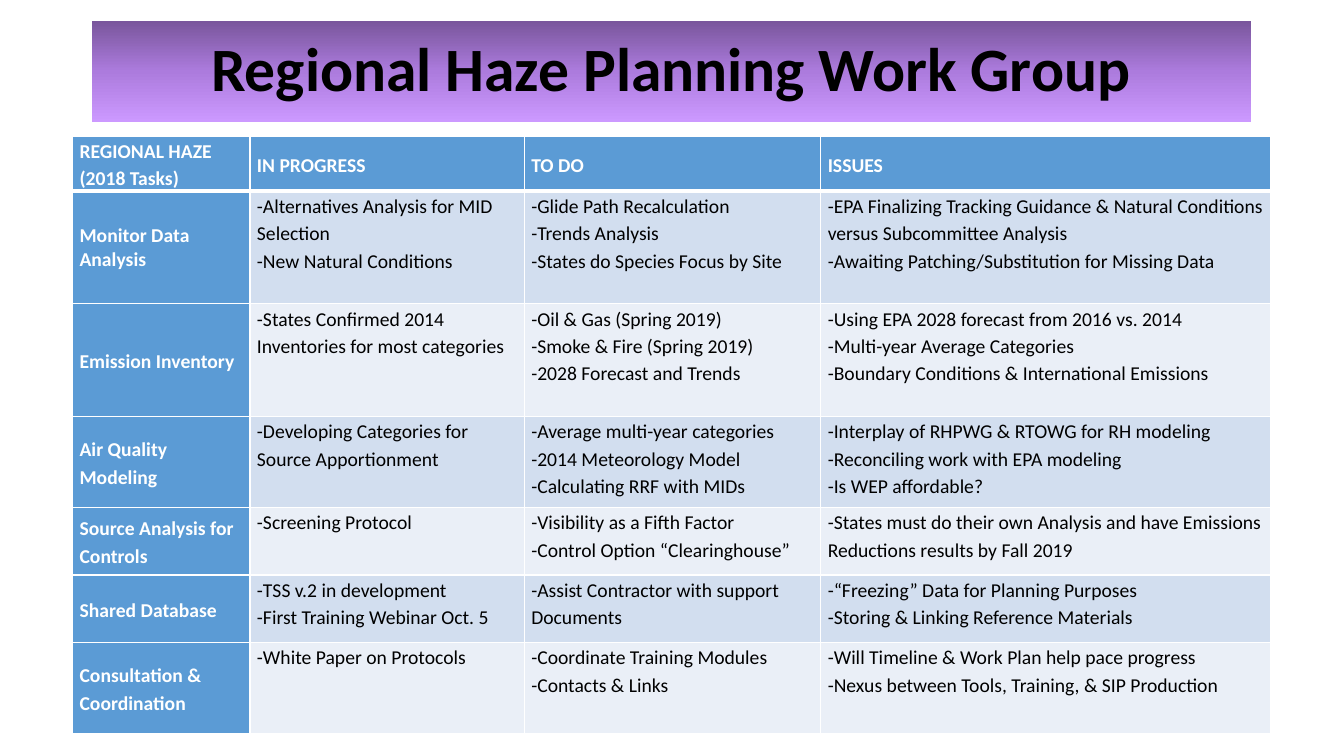
"""Build the Regional Haze Planning Work Group status slide."""
from copy import deepcopy

from lxml import etree
from pptx import Presentation
from pptx import util as u
from pptx.dml.color import RGBColor
from pptx.enum import text
from pptx.oxml.ns import qn

WIDTH, HEIGHT = u.Inches(13.33), u.Inches(7.5)
FONT = "Calibri"
WHITE, BLACK, BLUE = "FFFFFF", "000000", "5B9BD5"
BANDS = ("D2DEEF", "EAEFF7")
TITLE_GRADIENT = ((0, "79569C"), (0.5, "AC7BDD"), (1, "CC99FF"))
COLUMN_SHARES = (13.2, 20.41, 22.06, 33.46)
ROW_SHARES = (7.2, 14.93, 14.93, 12, 8.93, 8.93, 12)
TASKS = (
    ("REGIONAL HAZE (2018 Tasks)", "IN PROGRESS", "TO DO", "ISSUES"),
    ("Monitor Data Analysis",
     "-Alternatives Analysis for MID Selection\n-New Natural Conditions",
     "-Glide Path Recalculation\n-Trends Analysis\n-States do Species Focus by Site",
     "-EPA Finalizing Tracking Guidance & Natural Conditions versus Subcommittee Analysis\n"
     "-Awaiting Patching/Substitution for Missing Data"),
    ("Emission Inventory",
     "-States Confirmed 2014 Inventories for most categories",
     "-Oil & Gas (Spring 2019)\n-Smoke & Fire (Spring 2019)\n-2028 Forecast and Trends",
     "-Using EPA 2028 forecast from 2016 vs. 2014\n-Multi-year Average Categories\n"
     "-Boundary Conditions & International Emissions"),
    ("Air Quality Modeling",
     "-Developing Categories for Source Apportionment",
     "-Average multi-year categories\n-2014 Meteorology Model\n-Calculating RRF with MIDs",
     "-Interplay of RHPWG & RTOWG for RH modeling\n-Reconciling work with EPA modeling\n"
     "-Is WEP affordable?"),
    ("Source Analysis for Controls",
     "-Screening Protocol",
     "-Visibility as a Fifth Factor\n-Control Option “Clearinghouse”",
     "-States must do their own Analysis and have Emissions Reductions results by Fall 2019"),
    ("Shared Database",
     "-TSS v.2 in development\n-First Training Webinar Oct. 5",
     "-Assist Contractor with support Documents",
     "-“Freezing” Data for Planning Purposes\n-Storing & Linking Reference Materials"),
    ("Consultation & Coordination",
     "-White Paper on Protocols",
     "-Coordinate Training Modules\n-Contacts & Links",
     "-Will Timeline & Work Plan help pace progress\n"
     "-Nexus between Tools, Training, & SIP Production"),
)


def color(value):
    """Turn a hex string into a colour."""
    return RGBColor.from_string(value)


def across(percent):
    """Return a share of the slide's width."""
    return round(WIDTH * percent / 100)


def down(percent):
    """Return a share of the slide's height."""
    return round(HEIGHT * percent / 100)


def style_paragraph(p, size, value, bold, spacing):
    """Set the font and line spacing of a paragraph."""
    p.font.name, p.font.size, p.font.bold = FONT, u.Pt(size), bold
    p.font.color.rgb = color(value)
    p.line_spacing = spacing


def fill_gradient(fill, stops):
    """Fill from top to bottom through three colour stops."""
    fill.gradient()
    fill.gradient_angle = 270
    first = fill.gradient_stops[0]._gs
    first.addnext(deepcopy(first))
    for stop, (position, value) in zip(fill.gradient_stops, stops):
        stop.position = position
        stop.color.rgb = color(value)


def add_title(s, words):
    """Place the title on its gradient banner."""
    sp = s.shapes.title
    sp.left, sp.top, sp.width, sp.height = across(6.83), down(2.8), across(86.27), down(13.33)
    fill_gradient(sp.fill, TITLE_GRADIENT)
    tf = sp.text_frame
    tf.text = words
    tf.auto_size = text.MSO_AUTO_SIZE.NONE
    tf.vertical_anchor = text.MSO_ANCHOR.MIDDLE
    p = tf.paragraphs[0]
    p.alignment = text.PP_ALIGN.CENTER
    style_paragraph(p, 44, BLACK, True, 0.9)


def set_borders(cell, top, bottom):
    """Draw white cell borders with the given top and bottom widths."""
    sides = (("L", 1), ("R", 1), ("T", top), ("B", bottom))
    for i, (side, width) in enumerate(sides):
        ln = etree.Element(qn(f"a:ln{side}"), w=str(u.Pt(width)))
        solid = etree.SubElement(ln, qn("a:solidFill"))
        etree.SubElement(solid, qn("a:srgbClr"), val=WHITE)
        cell._tc.get_or_add_tcPr().insert(i, ln)


def format_cell(cell, row, column):
    """Format a cell by its place in the table."""
    heading = row == 0 or column == 0
    centred = heading and (row, column) != (0, 0)
    cell.margin_left = cell.margin_right = u.Inches(0.07)
    cell.margin_top = cell.margin_bottom = 0
    cell.vertical_anchor = text.MSO_ANCHOR.MIDDLE if centred else text.MSO_ANCHOR.TOP
    cell.fill.solid()
    cell.fill.fore_color.rgb = color(BLUE if heading else BANDS[(row - 1) % 2])
    set_borders(cell, 3 if row == 1 else 1, 3 if row == 0 else 1)
    spacing = 1.0 if (row, column) == (1, 0) else 1.15
    for p in cell.text_frame.paragraphs:
        style_paragraph(p, 14, WHITE if heading else BLACK, heading, spacing)


def add_task_table(s, tasks):
    """Add the table of tasks and their status."""
    table = s.shapes.add_table(
        len(tasks), len(COLUMN_SHARES), across(5.4), down(18),
        across(sum(COLUMN_SHARES)), down(sum(ROW_SHARES))).table
    for column, share in zip(table.columns, COLUMN_SHARES):
        column.width = across(share)
    for row, share in zip(table.rows, ROW_SHARES):
        row.height = down(share)
    for i, task in enumerate(tasks):
        for j, words in enumerate(task):
            cell = table.cell(i, j)
            cell.text = words
            format_cell(cell, i, j)


def main():
    """Build and save the slide."""
    prs = Presentation()
    prs.slide_width, prs.slide_height = WIDTH, HEIGHT
    s = prs.slides.add_slide(prs.slide_layouts[5])
    add_title(s, "Regional Haze Planning Work Group")
    add_task_table(s, TASKS)
    prs.save("out.pptx")


if __name__ == "__main__":
    main()
